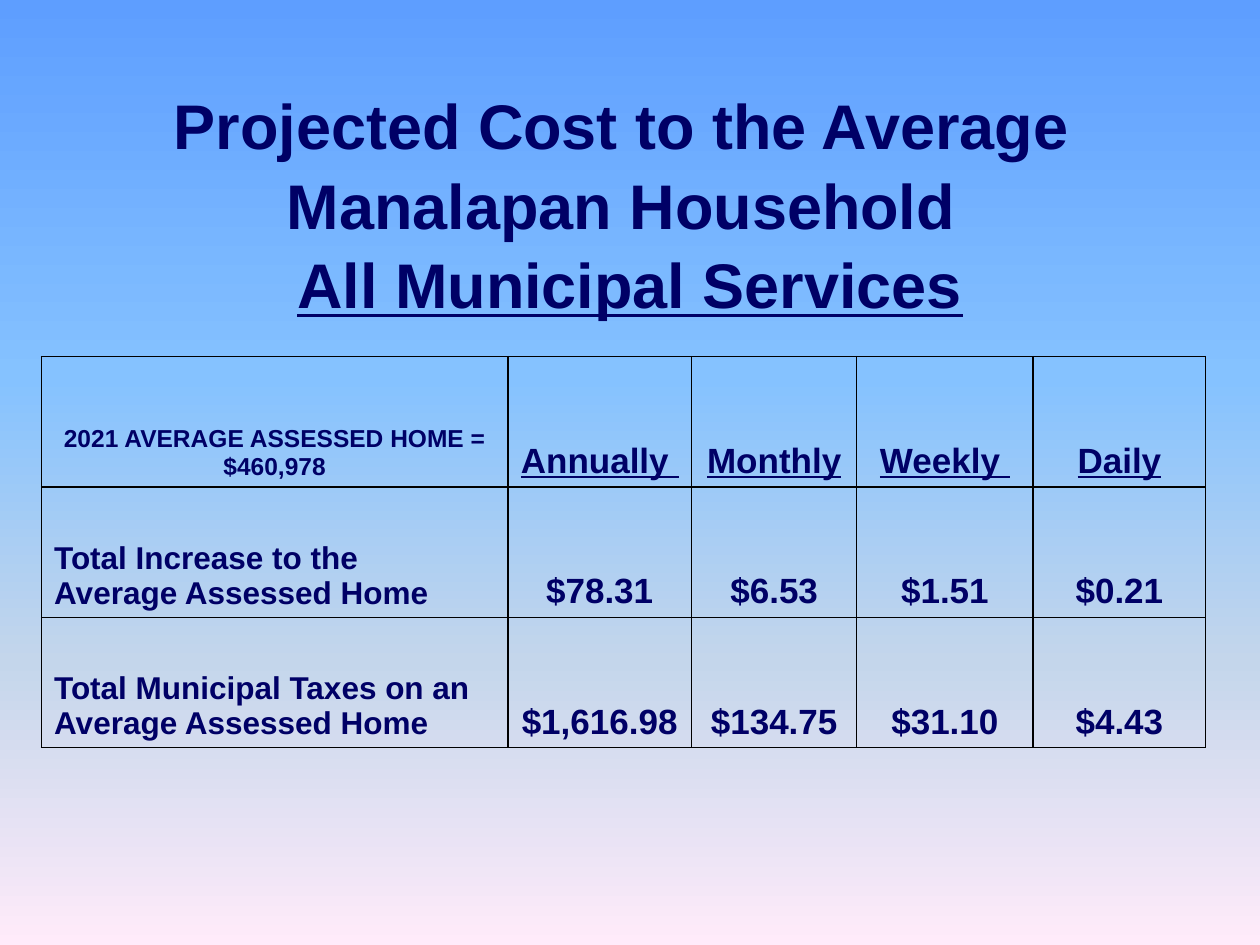
from copy import deepcopy

from lxml import etree
from pptx import Presentation
from pptx.dml.color import RGBColor
from pptx.enum.text import MSO_ANCHOR, PP_ALIGN
from pptx.oxml.ns import qn
from pptx.util import Inches, Pt

# Content
TITLE = ["Projected Cost to the Average ", "Manalapan Household ", "All Municipal Services"]
HEADER = ["2021 AVERAGE ASSESSED HOME = $460,978", "Annually ", "Monthly", "Weekly ", "Daily"]
ROWS = [
    ["Total Increase to the\nAverage Assessed Home", "$78.31", "$6.53", "$1.51", "$0.21"],
    ["Total Municipal Taxes on an\nAverage Assessed Home", "$1,616.98", "$134.75", "$31.10", "$4.43"],
]
COL_WIDTHS = [3.7, 1.46, 1.31, 1.4, 1.37]
ROW_HEIGHT = 1.035

COLORS = {"text": "000066", "border": "000000"}
SKY = [(0, "5E9EFF"), (0.4, "85C2FF"), (0.7, "C4D6EB"), (1, "FFEBFA")]
FONT = {"name": "Arial", "bold": True}


def format_run(r, **values):
    for key, value in {**FONT, **values}.items():
        setattr(r.font, key, value)
    r.font.color.rgb = RGBColor.from_string(COLORS["text"])


def set_gradient(fill, stops):
    fill.gradient()
    fill.gradient_angle = 270
    first = fill.gradient_stops[0]
    gs_list = fill._fill._gradFill.find(qn("a:gsLst"))
    template = gs_list[0]
    while len(gs_list) < len(stops):
        gs_list.append(deepcopy(template))
    for stop, (position, color) in zip(fill.gradient_stops, stops):
        stop.position = position
        stop.color.rgb = RGBColor.from_string(color)


def set_borders(cell):
    tc_pr = cell._tc.get_or_add_tcPr()
    for i, side in enumerate(("lnL", "lnR", "lnT", "lnB")):
        ln = etree.Element(qn(f"a:{side}"), w=str(Pt(1)))
        fill = etree.SubElement(ln, qn("a:solidFill"))
        etree.SubElement(fill, qn("a:srgbClr"), val=COLORS["border"])
        tc_pr.insert(i, ln)


def fill_cell(cell, text, align, **values):
    cell.fill.background()
    cell.vertical_anchor = MSO_ANCHOR.BOTTOM
    cell.text = text
    for p in cell.text_frame.paragraphs:
        p.alignment = align
        for r in p.runs:
            format_run(r, **values)
    set_borders(cell)


prs = Presentation()
prs.slide_width, prs.slide_height = Inches(10), Inches(7.5)
s = prs.slides.add_slide(prs.slide_layouts[5])
set_gradient(s.background.fill, SKY)

# Title: three lines, the last underlined
title = s.shapes.title
title.left, title.top, title.width, title.height = map(Inches, (0.5, 0.33, 9, 1.25))
tf = title.text_frame
tf.word_wrap = True
tf.vertical_anchor = MSO_ANCHOR.TOP
tf.margin_top = Inches(0.33)
p = tf.paragraphs[0]
p.alignment = PP_ALIGN.CENTER
p.line_spacing = 1.05
for i, line in enumerate(TITLE):
    if i:
        p.add_line_break()
    r = p.add_run()
    r.text = line
    format_run(r, size=Pt(36), underline=line == TITLE[-1])

# Cost table
grid = [HEADER] + ROWS
table = s.shapes.add_table(
    len(grid), len(HEADER), Inches(0.33), Inches(2.83),
    Inches(sum(COL_WIDTHS)), Inches(ROW_HEIGHT * len(grid))).table
table.first_row = table.horz_banding = False
for column, width in zip(table.columns, COL_WIDTHS):
    column.width = Inches(width)
for i, row in enumerate(grid):
    table.rows[i].height = Inches(ROW_HEIGHT)
    for j, text in enumerate(row):
        is_label = j == 0
        size = 20 if not is_label else 18 if i else 14
        align = PP_ALIGN.LEFT if is_label and i else PP_ALIGN.CENTER
        fill_cell(table.cell(i, j), text, align,
                  size=Pt(size), underline=i == 0 and not is_label)

prs.save("out.pptx")
